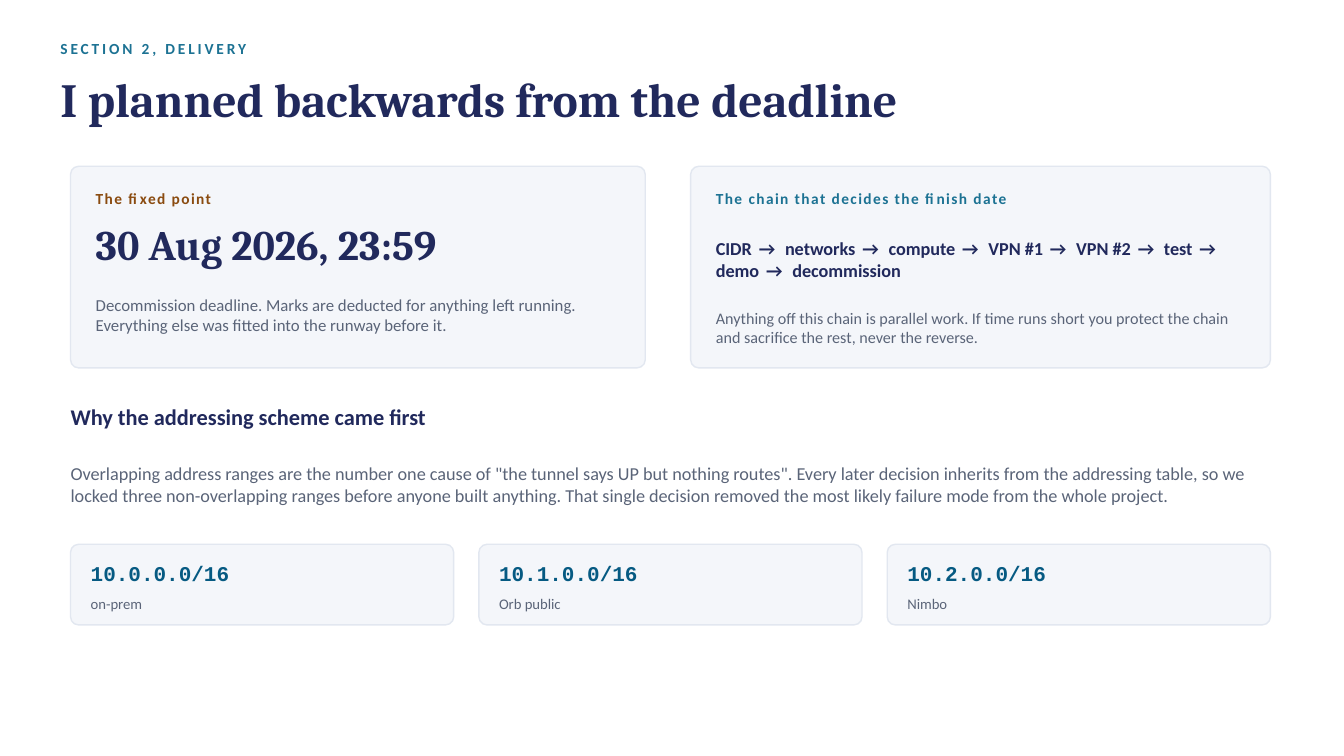
"""Build the delivery slide: deadline, critical chain and addressing scheme."""
from pptx import Presentation
from pptx.dml.color import RGBColor
from pptx.enum.shapes import MSO_SHAPE
from pptx.enum.text import MSO_ANCHOR
from pptx.util import Inches, Pt

ROUNDED = MSO_SHAPE.ROUNDED_RECTANGLE
MIDDLE = MSO_ANCHOR.MIDDLE
SANS, SERIF, MONO = "Calibri", "Cambria", "Courier New"
NAVY, TEAL, BROWN, BLUE, GREY = "21295C", "1C7293", "8A4B10", "065A82", "5A6478"
PANEL, BORDER = "F4F6FA", "E2E7F0"
GRID = Inches(0.1)
LEFT, WIDTH = 7, 119
color = RGBColor.from_string

deck = Presentation()
deck.slide_width, deck.slide_height = Inches(13.33), Inches(7.5)
slide = deck.slides.add_slide(deck.slide_layouts[6])


def add_card(column, row, columns, rows, rounding):
    """Draw a pale rounded card at a grid position."""
    card = slide.shapes.add_shape(
        ROUNDED, *(round(cells * GRID) for cells in (column, row, columns, rows)))
    card.adjustments[0] = rounding
    card.shadow.inherit = False
    card.fill.solid()
    card.fill.fore_color.rgb = color(PANEL)
    card.line.color.rgb = color(BORDER)
    card.line.width = Pt(1)


def add_text(column, row, columns, rows, spans, size, ink, font=SANS, bold=False):
    """Write (text, letter spacing) spans in one vertically centred paragraph."""
    box = slide.shapes.add_textbox(
        *(round(cells * GRID) for cells in (column, row, columns, rows)))
    frame = box.text_frame
    frame.word_wrap = True
    frame.vertical_anchor = MIDDLE
    frame.margin_left = frame.margin_right = frame.margin_top = frame.margin_bottom = 0
    para = frame.paragraphs[0]
    for text, spacing in spans:
        span = para.add_run()
        span.text = text
        span.font.name, span.font.size, span.font.bold = font, Pt(size), bold
        span.font.color.rgb = color(ink)
        if spacing:
            span._r.get_or_add_rPr().set("spc", str(spacing * 100))


add_text(6, 3.4, 121, 2.8, [("SECTION 2, DELIVERY", 2)], 11, TEAL, bold=True)
add_text(6, 6.2, 121, 7.2, [("I planned backwards from the deadline", 0)],
         34, NAVY, SERIF, True)

panels = [
    (LEFT, 57, 52, "The fixed point", BROWN),
    (68.5, 57.5, 53, "The chain that decides the finish date", TEAL),
]
for column, columns, text_columns, heading, ink in panels:
    add_card(column, 16.5, columns, 20, 0.04)
    add_text(column + 2.5, 18.2, text_columns, 3, [(heading, 1)], 11, ink, bold=True)

add_text(9.5, 21.2, 52, 6, [("30 Aug 2026, 23:59", 0)], 30, NAVY, SERIF, True)
add_text(9.5, 27.2, 52, 8, [(
    "Decommission deadline. Marks are deducted for anything left running. "
    "Everything else was fitted into the runway before it.", 0)], 12, GREY)

steps = ["CIDR", "networks", "compute", "VPN #1", "VPN #2", "test", "demo", "decommission"]
chain = [(steps[0], 0)]
for step in steps[1:]:
    chain += [(" → ", 2), (step, 0)]
add_text(71, 21.5, 53, 8.5, chain, 13, NAVY, bold=True)
add_text(71, 29.5, 53, 6, [(
    "Anything off this chain is parallel work. If time runs short you protect "
    "the chain and sacrifice the rest, never the reverse.", 0)], 11.5, GREY)

add_text(LEFT, 39.5, WIDTH, 3.6, [("Why the addressing scheme came first", 0)],
         16, NAVY, bold=True)
add_text(LEFT, 43.5, WIDTH, 9, [(
    'Overlapping address ranges are the number one cause of "the tunnel says UP '
    'but nothing routes". Every later decision inherits from the addressing table, '
    "so we locked three non-overlapping ranges before anyone built anything. That "
    "single decision removed the most likely failure mode from the whole project.", 0)],
    13, GREY)

ranges = [("10.0.0.0/16", "on-prem"), ("10.1.0.0/16", "Orb public"), ("10.2.0.0/16", "Nimbo")]
gap = 2.5
card_columns = (WIDTH - gap * (len(ranges) - 1)) / len(ranges)
for index, (address, place) in enumerate(ranges):
    column = LEFT + index * (card_columns + gap)
    add_card(column, 54, card_columns, 8, 0.1)
    add_text(column + 2, 55.2, card_columns - 4, 3.4, [(address, 0)], 15, BLUE, MONO, True)
    add_text(column + 2, 58.6, card_columns - 4, 2.6, [(place, 0)], 10.5, GREY)

deck.save("out.pptx")
